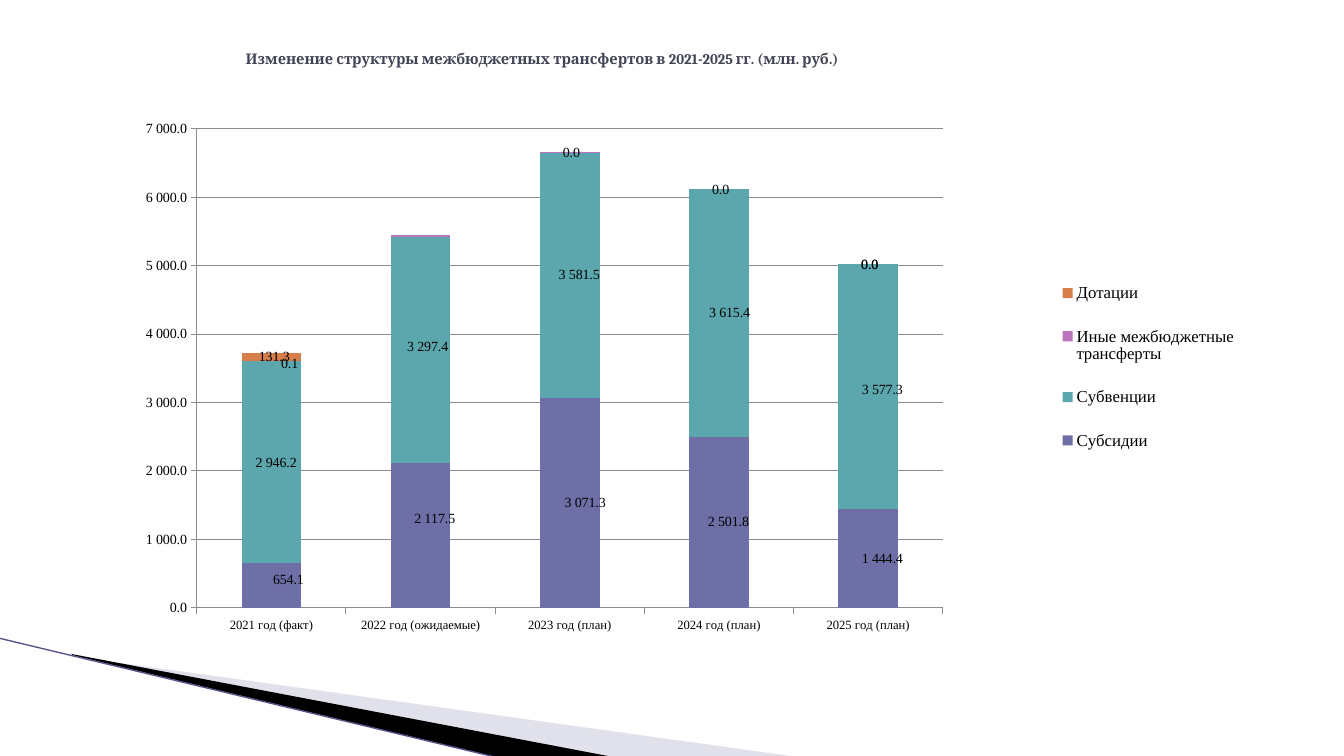
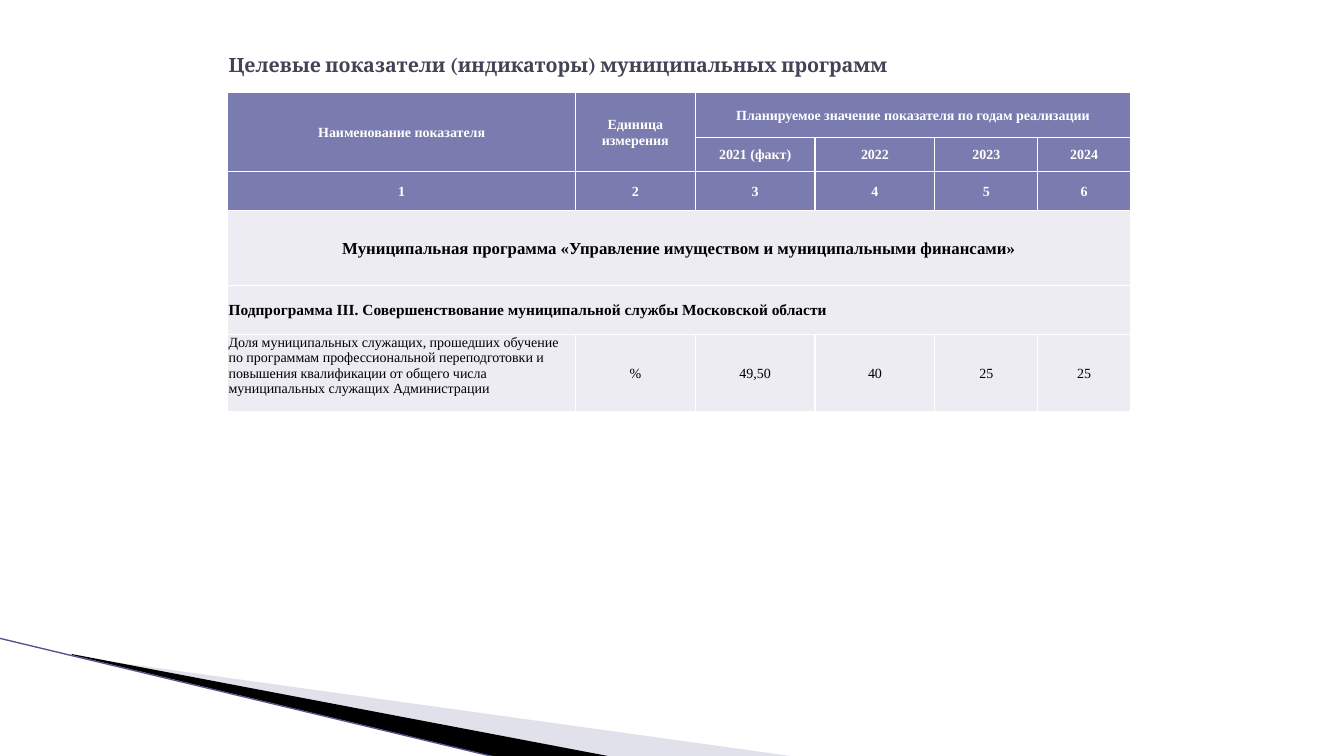
"""Build two budget slides: a transfers chart and a table of programme targets."""
from lxml.etree import SubElement
from pptx import Presentation
from pptx.chart.data import CategoryChartData
from pptx.dml.color import RGBColor
from pptx.enum.chart import XL_CHART_TYPE as ChartType, XL_LEGEND_POSITION as LegendSide
from pptx.enum.chart import XL_TICK_MARK as Tick
from pptx.enum.shapes import MSO_CONNECTOR as Connector
from pptx.enum.text import MSO_ANCHOR as Anchor, PP_ALIGN as Align
from pptx.oxml import parse_xml
from pptx.oxml.ns import nsdecls, qn
from pptx.util import Cm, Pt

rgb = RGBColor.from_string
SERIF = "Times New Roman"
NUMBER = "#\\ ##0.0"
INK, HEAD, PALE, GRID = "424456", "7A7BAE", "ECECF2", "8B8B8B"


def write(frame, text, font=SERIF, size=10, color="000000", bold=False, align=Align.LEFT):
    """Put one formatted paragraph into a text frame."""
    frame.word_wrap = True
    para = frame.paragraphs[0]
    para.alignment = align
    span = para.add_run()
    span.text = text
    span.font.name, span.font.size, span.font.bold = font, Pt(size), bold
    span.font.color.rgb = rgb(color)


def manual_layout(x, y, w=None, h=None, inner=False):
    """Return a chart layout element in fractions of the chart."""
    parts = '<c:layoutTarget val="inner"/>' if inner else ""
    if w is not None:
        parts += '<c:xMode val="edge"/><c:yMode val="edge"/>'
    for tag, value in zip("xywh", (x, y, w, h)):
        if value is not None:
            parts += f'<c:{tag} val="{value:.4f}"/>'
    return parse_xml(f'<c:layout {nsdecls("c")}><c:manualLayout>{parts}</c:manualLayout></c:layout>')


deck = Presentation()
deck.slide_width, deck.slide_height = Cm(33.87), Cm(19.05)

titles = [
    ("Изменение структуры межбюджетных трансфертов в 2021-2025 гг. (млн. руб.)",
     10.5, (5.94, 0.74, 17.15, 1.47)),
    ("Целевые показатели (индикаторы) муниципальных программ",
     14, (5.51, 0.76, 22.86, 1.75)),
]
wedges = [
    ("B6B6D1", 40, [(1.85, 16.54), (20.14, 19.08), (15.44, 19.08), (1.85, 16.51)]),
    ("000000", 100, [(1.8, 16.48), (15.47, 19.08), (12.6, 19.1), (1.83, 16.51)]),
]
for title, size, place in titles:
    page = deck.slides.add_slide(deck.slide_layouts[6])
    for color, opacity, points in wedges:
        corners = [(Cm(x), Cm(y)) for x, y in points]
        builder = page.shapes.build_freeform(*corners[0])
        builder.add_line_segments(corners[1:])
        wedge = builder.convert_to_shape()
        wedge.shadow.inherit = False
        wedge.line.fill.background()
        wedge.fill.solid()
        wedge.fill.fore_color.rgb = rgb(color)
        if opacity < 100:
            tint = wedge._element.spPr.find(qn("a:solidFill"))[0]
            SubElement(tint, qn("a:alpha")).set("val", str(opacity * 1000))
    edge = page.shapes.add_connector(Connector.STRAIGHT, Cm(-0.03), Cm(16.08), Cm(12.57), Cm(19.1))
    edge.line.color.rgb = rgb("53548A")
    edge.line.width = Pt(0.95)
    SubElement(edge._element.spPr, qn("a:effectLst"))
    box = page.shapes.add_textbox(*map(Cm, place))
    box.text_frame.vertical_anchor = Anchor.MIDDLE
    write(box.text_frame, title, font="Cambria", size=size, color=INK, bold=True)

chart_page, table_page = deck.slides

series_rows = [
    ("Субсидии", "6E6FA6", (654.1, 2117.5, 3071.3, 2501.8, 1444.4),
     [(0.013, -0.011), (0.012, -0.03), (0.013, 0), (0.008, 0), (0.012, 0)]),
    ("Субвенции", "5BA7AD", (2946.2, 3297.4, 3581.5, 3615.4, 3577.3),
     [(0.004, 0), (0.006, -0.007), (0.008, 0), (0.009, 0), (0.012, 0.005)]),
    ("Иные межбюджетные трансферты", "BB75BD", (0.1, 27.1, 5, 0, 0),
     [(0.014, 0.005), None, None, None]),
    ("Дотации", "D67F4A", (131.3, 0, 0, 0, 0), [(0.001, 0), None]),
]
data = CategoryChartData(number_format=NUMBER)
data.categories = ["2021 год (факт)", "2022 год (ожидаемые)", "2023 год (план)",
                   "2024 год (план)", "2025 год (план)"]
for name, color, values, shifts in series_rows:
    data.add_series(name, values)
chart = chart_page.shapes.add_chart(
    ChartType.COLUMN_STACKED, Cm(2.13), Cm(2.72), Cm(29.79), Cm(13.59), data).chart
chart.has_title = False
chart.font.name, chart.font.size = SERIF, Pt(10)
chart.font.color.rgb = rgb("000000")
plot = chart.plots[0]
plot.gap_width, plot.overlap, plot.vary_by_categories = 150, 100, False

for series, (name, color, values, shifts) in zip(plot.series, series_rows):
    series.format.fill.solid()
    series.format.fill.fore_color.rgb = rgb(color)
    labels = series.data_labels
    labels.show_value = True
    labels.number_format, labels.number_format_is_linked = NUMBER, False
    labels.font.name, labels.font.size = SERIF, Pt(10)
    for index, shift in enumerate(shifts):
        if shift is None:
            labels._element.insert(index, parse_xml(
                f'<c:dLbl {nsdecls("c")}><c:idx val="{index}"/><c:delete val="1"/></c:dLbl>'))
            continue
        font = series.points[index].data_label.font
        font.name, font.size = SERIF, Pt(10)
        label = labels._element[index]
        label.insert(1, manual_layout(*shift))
        label.insert(2, parse_xml(
            f'<c:numFmt {nsdecls("c")} formatCode="{NUMBER}" sourceLinked="0"/>'))

for axis, size in ((chart.category_axis, 9), (chart.value_axis, 10)):
    axis.tick_labels.font.name, axis.tick_labels.font.size = SERIF, Pt(size)
    axis.major_tick_mark, axis.minor_tick_mark = Tick.OUTSIDE, Tick.NONE
    axis.format.line.color.rgb = rgb(GRID)
scale = chart.value_axis
scale.minimum_scale, scale.maximum_scale, scale.major_unit = 0, 7000, 1000
scale.tick_labels.number_format = NUMBER
scale.tick_labels.number_format_is_linked = False
scale.has_major_gridlines = True
scale.major_gridlines.format.line.color.rgb = rgb(GRID)

chart.has_legend = True
legend = chart.legend
legend.position, legend.include_in_layout = LegendSide.RIGHT, False
legend.font.name, legend.font.size = SERIF, Pt(12)
plot_area = chart._chartSpace.xpath("c:chart/c:plotArea")[0]
for parent, spot, layout in (
        (plot_area, 0, manual_layout(0.095, 0.039, 0.631, 0.888, inner=True)),
        (legend._element, 1, manual_layout(0.81, 0.28, 0.18, 0.4))):
    for old in parent.findall(qn("c:layout")):
        parent.remove(old)
    parent.insert(spot, layout)

widths = [8.76, 3.02, 3.02, 3.02, 2.59, 2.34]
heights = [1.12, 0.81, 0.97, 1.9, 1.22, 1.96]
rows = [
    ["Наименование показателя", "Единица измерения",
     "Планируемое значение показателя по годам реализации"],
    ["", "", "2021 (факт)", "2022", "2023", "2024"],
    ["1", "2", "3", "4", "5", "6"],
    ["Муниципальная программа «Управление имуществом и муниципальными финансами»"],
    ["Подпрограмма III. Совершенствование муниципальной службы Московской области"],
    ["Доля муниципальных служащих, прошедших обучение по программам профессиональной "
     "переподготовки и повышения квалификации от общего числа муниципальных служащих "
     "Администрации", "%", "49,50", "40", "25", "25"],
]
sizes = [10, 10, 10, 12, 11, 10]
table = table_page.shapes.add_table(
    len(rows), len(widths), Cm(5.74), Cm(2.34), Cm(sum(widths)), Cm(sum(heights))).table
for column, width in zip(table.columns, widths):
    column.width = Cm(width)
for row, height in zip(table.rows, heights):
    row.height = Cm(height)
for top, left, bottom, right in ((0, 0, 1, 0), (0, 1, 1, 1), (0, 2, 0, 5),
                                 (3, 0, 3, 5), (4, 0, 4, 5)):
    table.cell(top, left).merge(table.cell(bottom, right))

for r, texts in enumerate(rows):
    for c in range(len(widths)):
        cell = table.cell(r, c)
        cell.margin_left = cell.margin_top = cell.margin_right = Cm(0.02)
        cell.margin_bottom = 0
        cell.vertical_anchor = Anchor.TOP if (r, c) == (5, 0) else Anchor.MIDDLE
        cell.fill.solid()
        cell.fill.fore_color.rgb = rgb(HEAD if r < 3 else PALE)
        for spot, side in enumerate("LRTB"):
            cell._tc.tcPr.insert(spot, parse_xml(
                f'<a:ln{side} {nsdecls("a")} w="12700"><a:solidFill>'
                f'<a:srgbClr val="FFFFFF"/></a:solidFill></a:ln{side}>'))
        if c < len(texts) and texts[c]:
            write(cell.text_frame, texts[c], size=sizes[r], bold=r < 5,
                  color="FFFFFF" if r < 3 else "000000",
                  align=Align.LEFT if r > 3 and c == 0 else Align.CENTER)

deck.save("out.pptx")
